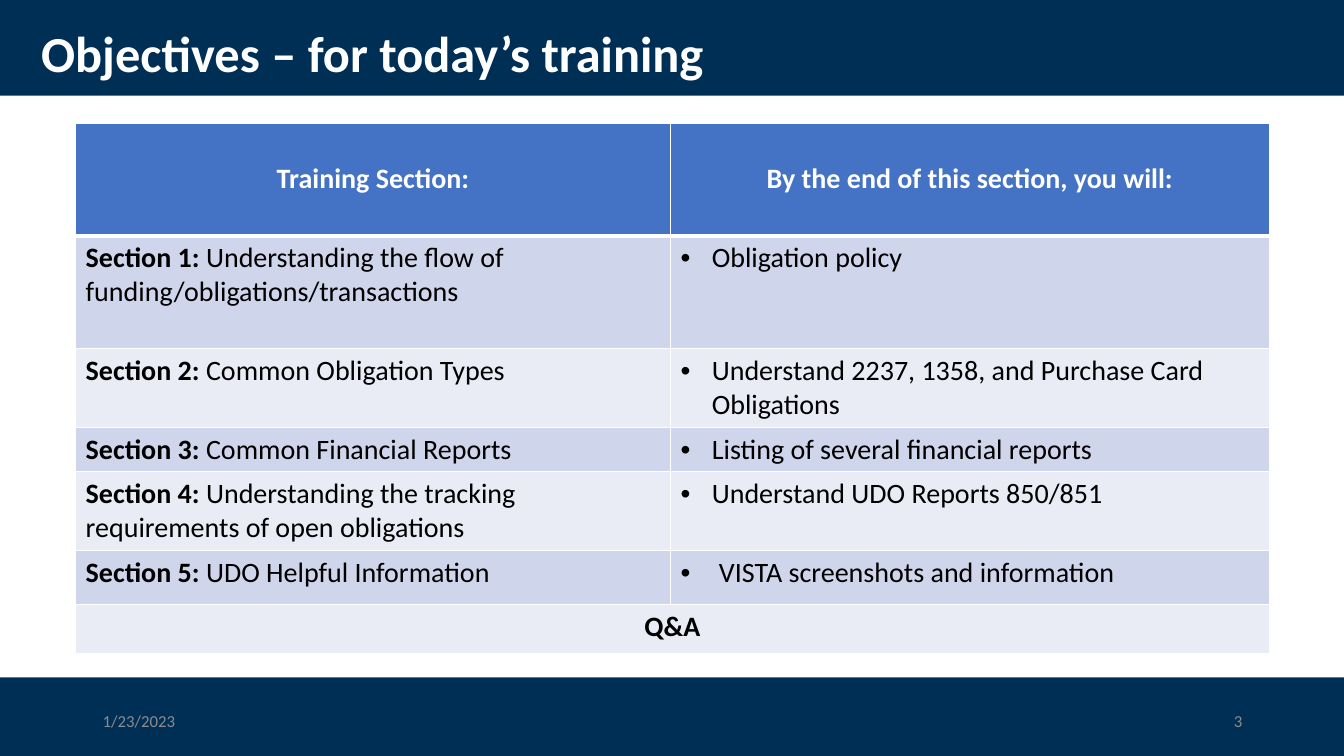
from lxml import etree
from pptx import Presentation
from pptx.dml.color import RGBColor
from pptx.enum.shapes import MSO_SHAPE
from pptx.enum.text import MSO_ANCHOR, PP_ALIGN
from pptx.oxml.ns import qn
from pptx.util import Inches, Pt

RECT = MSO_SHAPE.RECTANGLE
MIDDLE = MSO_ANCHOR.MIDDLE
LEFT, CENTER, RIGHT = PP_ALIGN.LEFT, PP_ALIGN.CENTER, PP_ALIGN.RIGHT

NAVY = RGBColor(0x00, 0x2F, 0x56)
BLUE = RGBColor(0x44, 0x72, 0xC4)
BANDS = [RGBColor(0xCF, 0xD5, 0xEA), RGBColor(0xE9, 0xEB, 0xF5)]
WHITE = RGBColor(0xFF, 0xFF, 0xFF)
BLACK = RGBColor(0x00, 0x00, 0x00)
GRAY = RGBColor(0x8C, 0x8C, 0x8C)

# Content
TITLE = "Objectives – for today’s training"
DATE, PAGE = "1/23/2023", "3"
HEADERS = ["Training Section:", "By the end of this section, you will:"]
# Section label, section topic, outcome, bullet indent
SECTIONS = [
    ("Section 1: ", "Understanding the flow of funding/obligations/transactions",
     "Obligation policy", 0.31),
    ("Section 2: ", "Common Obligation Types",
     "Understand 2237, 1358, and Purchase Card Obligations", 0.31),
    ("Section 3: ", "Common Financial Reports",
     "Listing of several financial reports", 0.31),
    ("Section 4: ", "Understanding the tracking requirements of open obligations",
     "Understand UDO Reports 850/851", 0.31),
    ("Section 5: ", "UDO Helpful Information",
     "VISTA screenshots and information", 0.38),
]
CLOSING = "Q&A"

# Layout in inches
BARS = [(0, 0.95), (6.72, 0.78)]
COL_WIDTHS = [5.9, 5.94]
ROW_HEIGHTS = [1.12, 1.12, 0.78, 0.44, 0.78, 0.54, 0.49]

TITLE_FONT = {"name": "Calibri", "size": Pt(36), "bold": True}
FOOTER_FONT = {"name": "Calibri", "size": Pt(12)}
STRONG = {"name": "Calibri", "size": Pt(20), "bold": True}
PLAIN = {"name": "Calibri", "size": Pt(20), "bold": False}


def add_run(p, text, font, color):
    r = p.add_run()
    r.text = text
    for key, value in font.items():
        setattr(r.font, key, value)
    r.font.color.rgb = color


def add_label(at, text, font, color, align=LEFT):
    tf = slide.shapes.add_textbox(*map(Inches, at)).text_frame
    tf.word_wrap = True
    tf.vertical_anchor = MIDDLE
    p = tf.paragraphs[0]
    p.alignment = align
    add_run(p, text, font, color)


def add_bullet(p, indent):
    pPr = p._p.get_or_add_pPr()
    pPr.set("marL", str(Inches(indent)))
    pPr.set("indent", str(-Inches(indent)))
    etree.SubElement(pPr, qn("a:buFont")).set("typeface", "Arial")
    etree.SubElement(pPr, qn("a:buChar")).set("char", "•")


def style_cell(cell, fill, top=1, bottom=1):
    tcPr = cell._tc.get_or_add_tcPr()
    for side, width in {"L": 1, "R": 1, "T": top, "B": bottom}.items():
        ln = etree.SubElement(tcPr, qn(f"a:ln{side}"), w=str(Pt(width)))
        line_fill = etree.SubElement(ln, qn("a:solidFill"))
        etree.SubElement(line_fill, qn("a:srgbClr"), val=str(WHITE))
    cell.fill.solid()
    cell.fill.fore_color.rgb = fill


prs = Presentation()
prs.slide_width, prs.slide_height = Inches(13.33), Inches(7.5)
slide = prs.slides.add_slide(prs.slide_layouts[6])

# Top and bottom bars
for top, height in BARS:
    sp = slide.shapes.add_shape(RECT, 0, Inches(top), prs.slide_width, Inches(height))
    sp.shadow.inherit = False
    sp.fill.solid()
    sp.fill.fore_color.rgb = NAVY
    sp.line.fill.background()

# Title
add_label((0.31, 0.18, 11.5, 0.68), TITLE, TITLE_FONT, WHITE)

# Table grid
table = slide.shapes.add_table(
    len(ROW_HEIGHTS), len(COL_WIDTHS), Inches(0.75), Inches(1.22),
    Inches(sum(COL_WIDTHS)), Inches(sum(ROW_HEIGHTS))).table
table.horz_banding = False
for col, width in zip(table.columns, COL_WIDTHS):
    col.width = Inches(width)
for i, (row, height) in enumerate(zip(table.rows, ROW_HEIGHTS)):
    row.height = Inches(height)
    for cell in row.cells:
        style_cell(cell, BANDS[(i - 1) % 2] if i else BLUE,
                   top=3 if i == 1 else 1, bottom=3 if i == 0 else 1)

# Header row
for cell, text in zip(table.rows[0].cells, HEADERS):
    cell.vertical_anchor = MIDDLE
    p = cell.text_frame.paragraphs[0]
    p.alignment = CENTER
    add_run(p, text, STRONG, WHITE)

# Section rows
for i, (label, topic, outcome, indent) in enumerate(SECTIONS, start=1):
    p = table.cell(i, 0).text_frame.paragraphs[0]
    add_run(p, label, STRONG, BLACK)
    add_run(p, topic, PLAIN, BLACK)
    p = table.cell(i, 1).text_frame.paragraphs[0]
    add_bullet(p, indent)
    add_run(p, outcome, PLAIN, BLACK)

# Closing row across both columns
last = len(ROW_HEIGHTS) - 1
closing = table.cell(last, 0)
closing.merge(table.cell(last, 1))
p = closing.text_frame.paragraphs[0]
p.alignment = CENTER
add_run(p, CLOSING, STRONG, BLACK)

# Footer
add_label((9.42, 6.95, 3, 0.4), PAGE, FOOTER_FONT, GRAY, RIGHT)
add_label((0.92, 6.95, 3, 0.4), DATE, FOOTER_FONT, GRAY)

prs.save("out.pptx")
